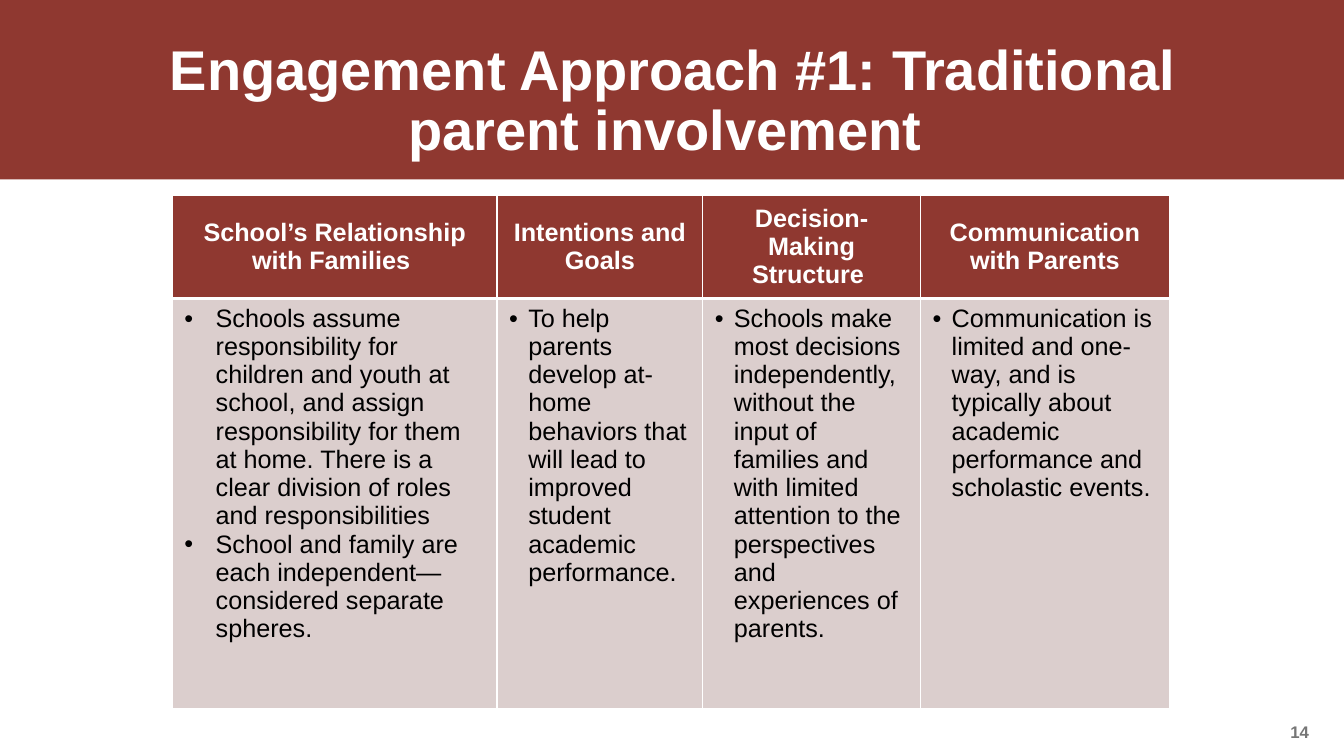
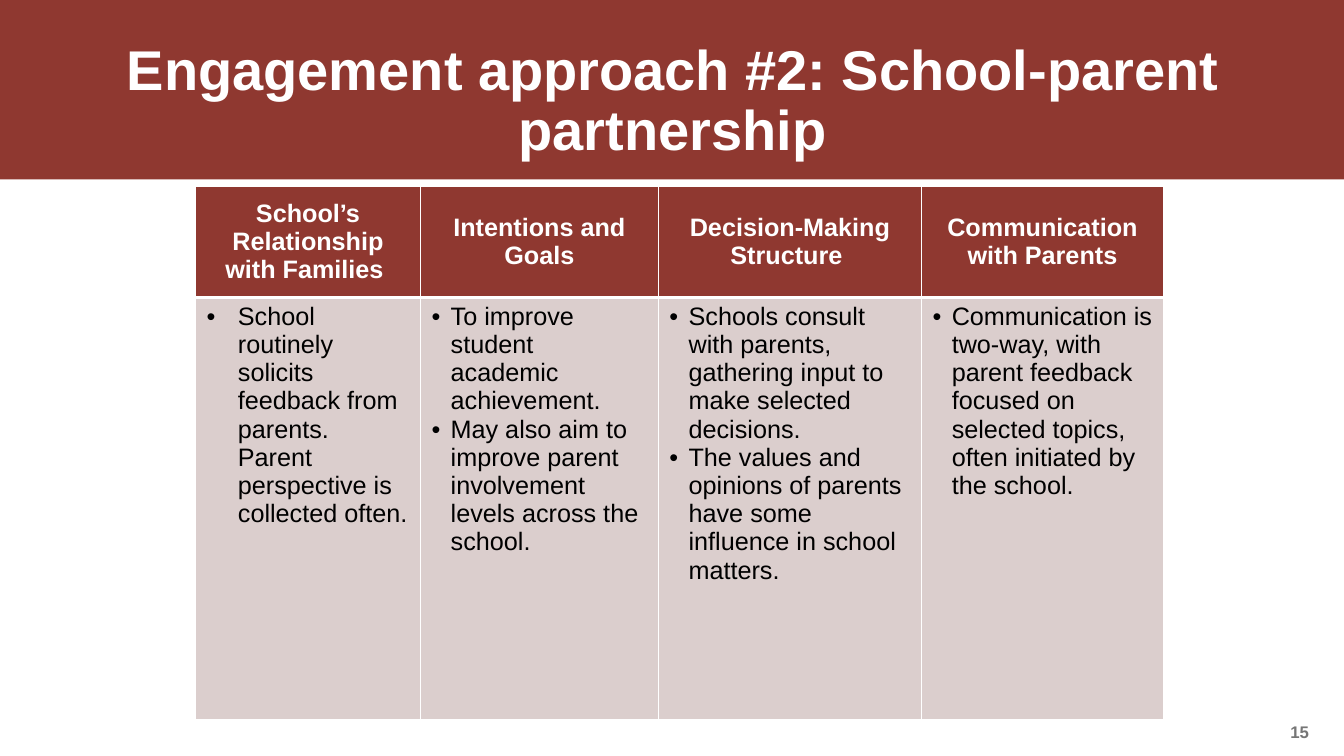
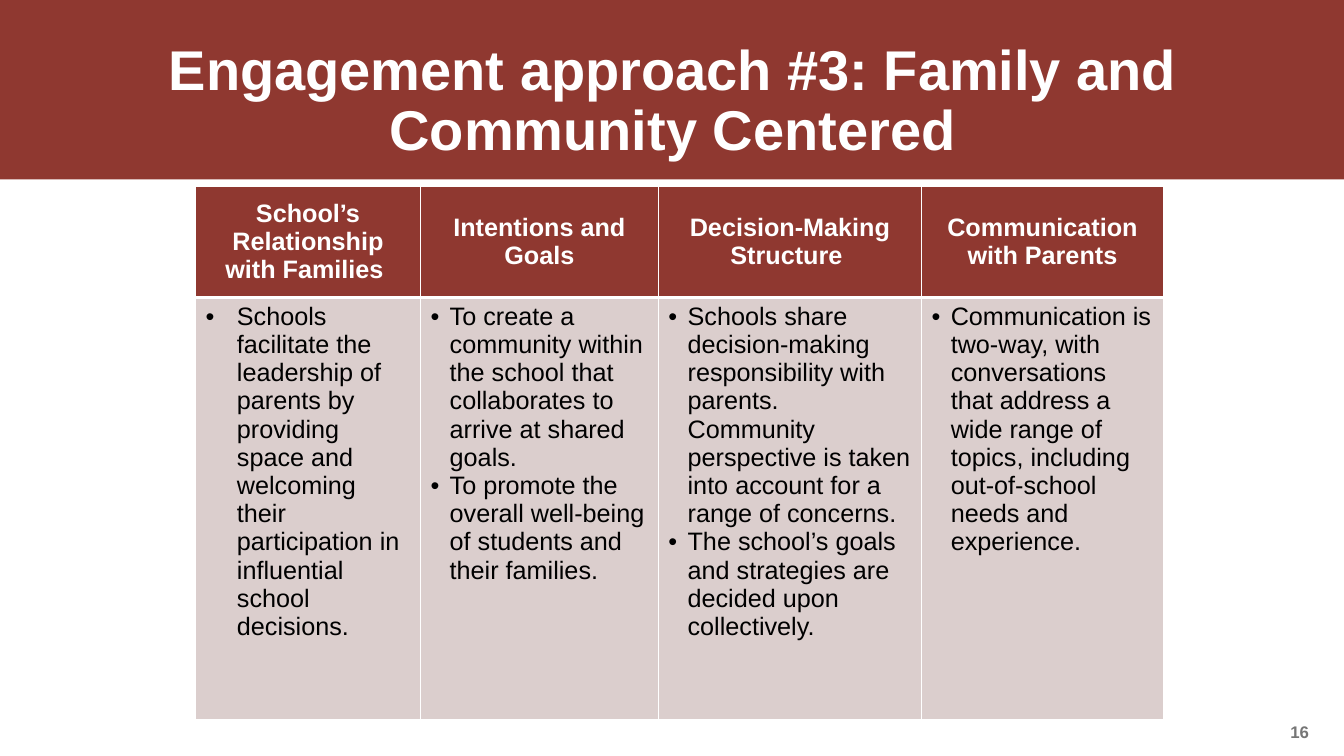
from lxml.etree import SubElement
from pptx import Presentation
from pptx.dml.color import RGBColor
from pptx.enum.shapes import MSO_SHAPE
from pptx.enum.text import MSO_ANCHOR, MSO_AUTO_SIZE, PP_ALIGN
from pptx.oxml.ns import qn
from pptx.util import Inches, Pt

RED, PINK, WHITE, BLACK, GREY = "8F3830", "DBCECD", "FFFFFF", "000000", "767676"
SIZE = (13.33, 7.5)
BAND = (0, 0, 13.33, 1.78)
TITLE = (0.92, 0.22, 11.5, 1.59)
NUMBER = (12.7, 7.13, 0.64, 0.25)
FIRST = 14

HEADS = ["School’s Relationship with Families ", "Intentions and Goals",
         "Decision-Making Structure ", "Communication with Parents"]
WIDE = {"box": (1.71, 1.94, 9.89, 5.05), "cols": (3.22, 2.04, 2.16, 2.47),
        "head": 0.98, "pads": [(0.12, 0.06), (0.12, 0.06)]}
EVEN = {"box": (1.94, 1.85, 9.6, 5.29), "cols": (2.23, 2.36, 2.61, 2.4),
        "head": 1.1, "pads": [(0.11, 0.05), (0.11, 0.05)]}
SLIM = {**EVEN, "pads": [(0.11, 0.05), (0.1, 0.05)]}

SLIDES = [
    ("Engagement Approach #1: Traditional parent involvement ", WIDE, [
        ["Schools assume responsibility for children and youth at school, and assign "
         "responsibility for them at home. There is a clear division of roles and "
         "responsibilities",
         "School and family are each independent—considered separate spheres."],
        ["To help parents develop at-home behaviors that will lead to improved student "
         "academic performance."],
        ["Schools make most decisions independently, without the input of families and "
         "with limited attention to the perspectives and experiences of parents."],
        ["Communication is limited and one-way, and is typically about academic "
         "performance and scholastic events."]]),
    ("Engagement approach #2: School-parent partnership", EVEN, [
        ["School routinely solicits feedback from parents. Parent perspective is "
         "collected often."],
        ["To improve student academic achievement.",
         "May also aim to improve parent involvement levels across the school."],
        ["Schools consult with parents, gathering input to make selected decisions.",
         "The values and opinions of parents have some influence in school matters."],
        ["Communication is two-way, with parent feedback focused on selected topics, "
         "often initiated by the school."]]),
    ("Engagement approach #3: Family and Community Centered", SLIM, [
        ["Schools facilitate the leadership of parents by providing space and welcoming "
         "their participation in influential school decisions."],
        ["To create a community within the school that collaborates to arrive at shared "
         "goals.",
         "To promote the overall well-being of students and their families."],
        ["Schools share decision-making responsibility with parents. Community "
         "perspective is taken into account for a range of concerns.",
         "The school’s goals and strategies are decided upon collectively."],
        ["Communication is two-way, with conversations that address a wide range of "
         "topics, including out-of-school needs and experience."]]),
]


def color(code):
    return RGBColor.from_string(code)


def apply(item, values):
    for name, value in values.items():
        setattr(item, name, value)


def style(para, size, code, bold):
    apply(para.font, {"name": "Arial", "size": Pt(size), "bold": bold})
    para.font.color.rgb = color(code)


def place(shape, box):
    apply(shape, dict(zip(("left", "top", "width", "height"), map(Inches, box))))


def bullet(para, indent):
    props = para._p.get_or_add_pPr()
    props.set("marL", str(Inches(indent)))
    props.set("indent", str(-Inches(indent)))
    tint = SubElement(props, qn("a:buClr"))
    SubElement(tint, qn("a:srgbClr"), val=BLACK)
    SubElement(props, qn("a:buFont"), typeface="Arial")
    SubElement(props, qn("a:buChar"), char="•")


def border(cell, widths):
    """Draw white edges; widths in points go left, right, top, bottom."""
    props = cell._tc.get_or_add_tcPr()
    for side, width in zip("LRTB", widths):
        line = SubElement(props, qn(f"a:ln{side}"), w=str(Pt(width)))
        fill = SubElement(line, qn("a:solidFill"))
        SubElement(fill, qn("a:srgbClr"), val=WHITE)


def finish(cell, code, pad, anchor):
    wide, high = map(Inches, pad)
    apply(cell, {"margin_left": wide, "margin_right": wide, "margin_top": high,
                 "margin_bottom": high, "vertical_anchor": anchor})
    cell.fill.solid()
    cell.fill.fore_color.rgb = color(code)


def head_cell(cell, text, pad):
    border(cell, (1, 1, 1, 3))
    finish(cell, RED, pad, MSO_ANCHOR.MIDDLE)
    cell.text = text
    para = cell.text_frame.paragraphs[0]
    para.alignment = PP_ALIGN.CENTER
    style(para, 18, WHITE, True)


def list_cell(cell, items, pad, indent):
    border(cell, (1, 1, 3, 1))
    finish(cell, PINK, pad, MSO_ANCHOR.TOP)
    cell.text = "\n".join(items)
    for para in cell.text_frame.paragraphs:
        bullet(para, indent)
        style(para, 18, BLACK, False)


def add_grid(slide, form, lists):
    box, head = form["box"], form["head"]
    table = slide.shapes.add_table(2, len(HEADS), *map(Inches, box)).table
    table.horz_banding = False
    for row, high in zip(table.rows, (head, box[3] - head)):
        row.height = Inches(high)
    top, low = form["pads"]
    for i, (wide, text, items) in enumerate(zip(form["cols"], HEADS, lists)):
        table.columns[i].width = Inches(wide)
        head_cell(table.cell(0, i), text, top)
        list_cell(table.cell(1, i), items, low, 0.19 if i else 0.31)


def add_title(slide, text):
    title = slide.shapes.title
    place(title, TITLE)
    frame = title.text_frame
    frame.text = text
    apply(frame, {"word_wrap": True, "auto_size": MSO_AUTO_SIZE.NONE,
                  "vertical_anchor": MSO_ANCHOR.MIDDLE})
    para = frame.paragraphs[0]
    apply(para, {"alignment": PP_ALIGN.CENTER, "line_spacing": 0.9})
    style(para, 40, WHITE, True)


def add_number(slide, number):
    frame = slide.shapes.add_textbox(*map(Inches, NUMBER)).text_frame
    apply(frame, {"word_wrap": True, "vertical_anchor": MSO_ANCHOR.MIDDLE})
    frame.text = str(number)
    style(frame.paragraphs[0], 12, GREY, True)


def add_band(slide):
    """Put the title band on the layout, behind every slide that uses it."""
    band = slide.shapes.add_shape(MSO_SHAPE.RECTANGLE, *map(Inches, BAND))
    band.shadow.inherit = False
    band.fill.solid()
    band.fill.fore_color.rgb = color(RED)
    band.line.fill.background()
    slide.slide_layout.shapes.element.insert(2, band.element)


def main():
    deck = Presentation()
    deck.slide_width, deck.slide_height = map(Inches, SIZE)
    layout = deck.slide_layouts[5]
    for number, (title, form, lists) in enumerate(SLIDES, FIRST):
        slide = deck.slides.add_slide(layout)
        if number == FIRST:
            add_band(slide)
        add_title(slide, title)
        add_number(slide, number)
        add_grid(slide, form, lists)
    deck.save("out.pptx")


if __name__ == "__main__":
    main()
